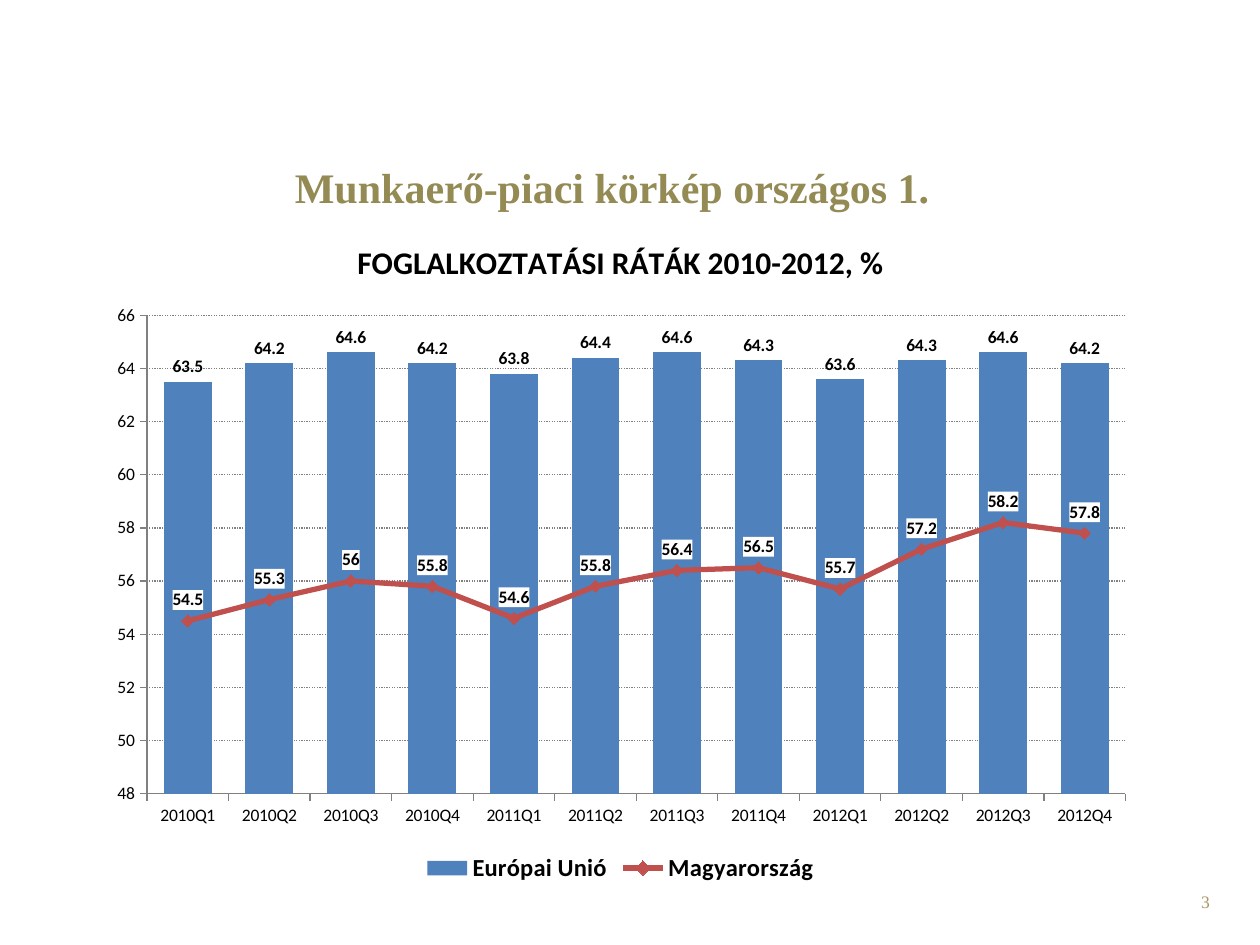
"""Build the slide on national employment rates with a combined column and line chart."""
from lxml import etree
from pptx import Presentation
from pptx.chart.data import CategoryChartData
from pptx.dml.color import RGBColor
from pptx.enum.chart import XL_CHART_TYPE, XL_LABEL_POSITION, XL_LEGEND_POSITION, XL_MARKER_STYLE, XL_TICK_MARK
from pptx.enum.dml import MSO_LINE
from pptx.enum.text import MSO_ANCHOR, PP_ALIGN
from pptx.oxml import parse_xml
from pptx.oxml.ns import nsdecls, qn
from pptx.util import Inches, Pt

COLUMNS = XL_CHART_TYPE.COLUMN_CLUSTERED
ABOVE, OUTSIDE_END = XL_LABEL_POSITION.ABOVE, XL_LABEL_POSITION.OUTSIDE_END
BOTTOM = XL_LEGEND_POSITION.BOTTOM
DIAMOND = XL_MARKER_STYLE.DIAMOND
OUTSIDE = XL_TICK_MARK.OUTSIDE
DOTTED = MSO_LINE.ROUND_DOT
TOP = MSO_ANCHOR.TOP
LEFT, RIGHT = PP_ALIGN.LEFT, PP_ALIGN.RIGHT
BLUE, RED, GREY = "4F81BD", "C0504D", "808080"


def color(value):
    return RGBColor.from_string(value)


def write(frame, text, size, fill, font="Times New Roman", bold=False, align=LEFT):
    frame.word_wrap = True
    frame.vertical_anchor = TOP
    paragraph = frame.paragraphs[0]
    paragraph.alignment = align
    run = paragraph.add_run()
    run.text = text
    run.font.name, run.font.size, run.font.bold = font, Pt(size), bold
    run.font.color.rgb = color(fill)


prs = Presentation()
prs.slide_width, prs.slide_height = Inches(10), Inches(7.5)
slide = prs.slides.add_slide(prs.slide_layouts[5])

heading = slide.shapes.title
heading.left, heading.top = Inches(2.24), Inches(1.23)
heading.width, heading.height = Inches(5.37), Inches(0.5)
write(heading.text_frame, "Munkaerő-piaci körkép országos 1.", 24, "948A54", bold=True)

page_number = slide.shapes.add_textbox(Inches(7.37), Inches(7.02), Inches(2.33), Inches(0.4))
write(page_number.text_frame, "3", 10, "A69765", align=RIGHT)

rates = CategoryChartData(number_format="General")
rates.categories = [f"{year}Q{quarter}" for year in (2010, 2011, 2012) for quarter in range(1, 5)]
rates.add_series("Európai Unió", (63.5, 64.2, 64.6, 64.2, 63.8, 64.4, 64.6, 64.3, 63.6, 64.3, 64.6, 64.2))
rates.add_series("Magyarország", (54.5, 55.3, 56, 55.8, 54.6, 55.8, 56.4, 56.5, 55.7, 57.2, 58.2, 57.8))
chart = slide.shapes.add_chart(COLUMNS, Inches(0.75), Inches(1.7), Inches(8.35), Inches(5.35), rates).chart
chart.font.name, chart.font.size = "Calibri", Pt(10)
chart.font.color.rgb = color("000000")
chart.has_title = True
write(chart.chart_title.text_frame, "FOGLALKOZTATÁSI RÁTÁK 2010-2012, %", 18, "000000", "Calibri", True, None)
chart.chart_title.include_in_layout = False
chart.has_legend = True
chart.legend.position = BOTTOM
chart.legend.include_in_layout = False
chart.legend.font.name, chart.legend.font.size, chart.legend.font.bold = "Calibri", Pt(14), True
chart.legend.font.color.rgb = color("000000")

columns = chart.plots[0]
columns.gap_width = 70
columns.vary_by_categories = False
plot_area = chart.element.find(".//" + qn("c:plotArea"))
bar_group = plot_area.find(qn("c:barChart"))
hungary_data = bar_group.findall(qn("c:ser"))[1]
for bar_option in hungary_data.findall(qn("c:invertIfNegative")):
    hungary_data.remove(bar_option)
line_group = parse_xml(
    f'<c:lineChart {nsdecls("c")}><c:grouping val="standard"/><c:varyColors val="0"/>'
    '<c:marker val="1"/></c:lineChart>')
line_group.insert(2, hungary_data)
for axis_id in bar_group.findall(qn("c:axId")):
    etree.SubElement(line_group, qn("c:axId")).set("val", axis_id.get("val"))
bar_group.addnext(line_group)

for old_layout in plot_area.findall(qn("c:layout")):
    plot_area.remove(old_layout)
plot_area.insert(0, parse_xml(
    f'<c:layout {nsdecls("c")}><c:manualLayout><c:layoutTarget val="inner"/>'
    '<c:xMode val="edge"/><c:yMode val="edge"/><c:x val="0.05"/><c:y val="0.15"/>'
    '<c:w val="0.93"/><c:h val="0.71"/></c:manualLayout></c:layout>'))

union, hungary = (plot.series[0] for plot in chart.plots)
union.format.fill.solid()
union.format.fill.fore_color.rgb = color(BLUE)
hungary.smooth = False
hungary.format.line.width = Pt(3)
hungary.format.line.color.rgb = color(RED)
hungary.marker.style, hungary.marker.size = DIAMOND, 7
hungary.marker.format.fill.solid()
hungary.marker.format.fill.fore_color.rgb = color(RED)
hungary.marker.format.line.color.rgb = color(RED)
for series, position in ((union, OUTSIDE_END), (hungary, ABOVE)):
    labels = series.data_labels
    labels.show_value = True
    labels.position = position
    labels.font.name, labels.font.size, labels.font.bold = "Calibri", Pt(10), True
    labels.font.color.rgb = color("000000")
hungary_data.find(qn("c:dLbls")).find(qn("c:txPr")).addprevious(parse_xml(
    f'<c:spPr {nsdecls("c", "a")}><a:solidFill><a:srgbClr val="FFFFFF"/></a:solidFill></c:spPr>'))

for axis in (chart.category_axis, chart.value_axis):
    axis.major_tick_mark = OUTSIDE
    axis.format.line.color.rgb = color(GREY)
rate_axis = chart.value_axis
rate_axis.minimum_scale, rate_axis.maximum_scale, rate_axis.major_unit = 48, 66, 2
gridlines = rate_axis.major_gridlines.format.line
gridlines.color.rgb = color(GREY)
gridlines.width = Pt(0.75)
gridlines.dash_style = DOTTED

prs.save("out.pptx")
